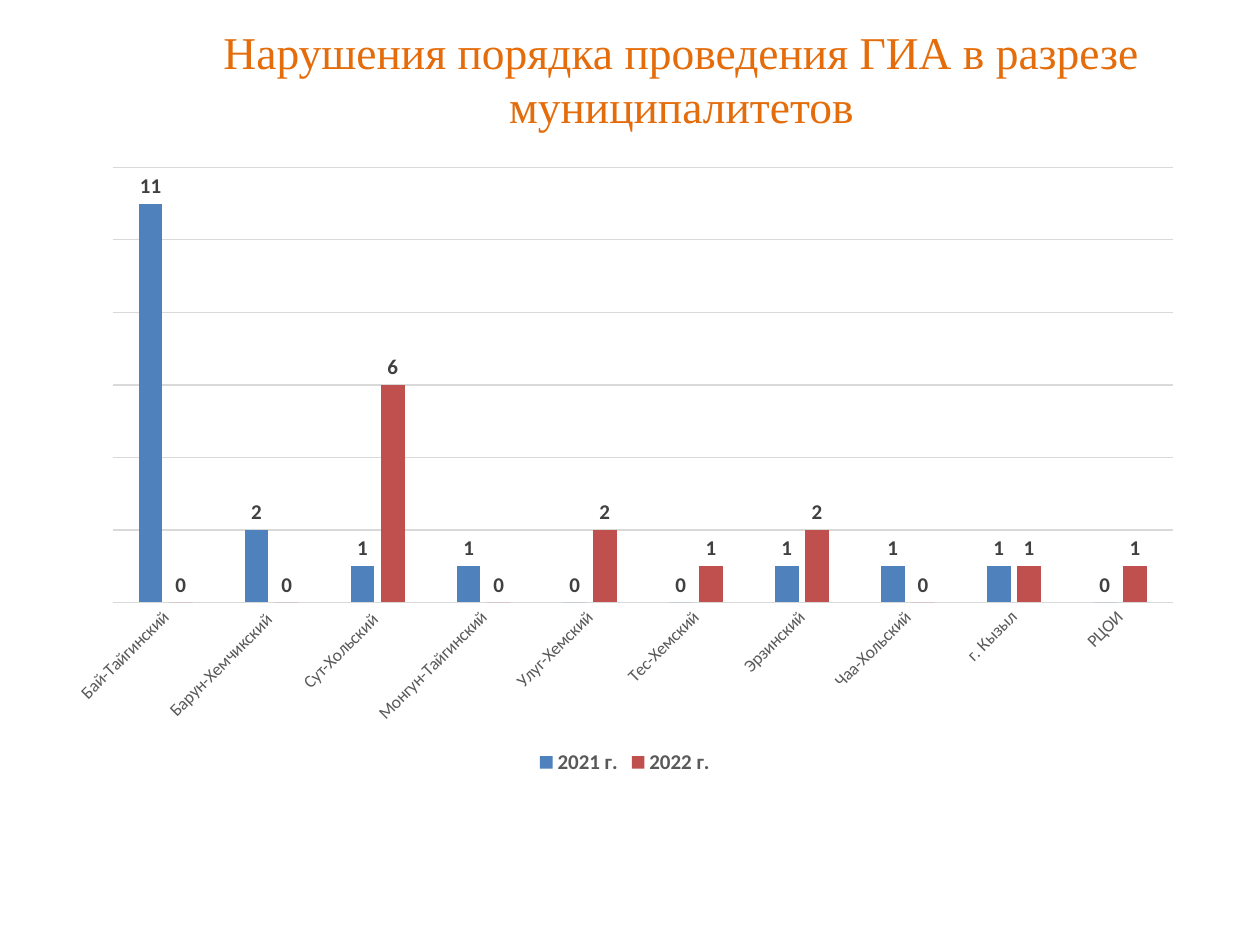
from pptx import Presentation
from pptx.chart.data import CategoryChartData
from pptx.dml.color import RGBColor
from pptx.enum.chart import (XL_CHART_TYPE, XL_LABEL_POSITION as LabelPos,
                             XL_LEGEND_POSITION as LegendPos, XL_TICK_MARK as Tick)
from pptx.enum.text import MSO_ANCHOR, PP_ALIGN
from pptx.util import Inches, Pt

TITLE = "Нарушения порядка проведения ГИА в разрезе муниципалитетов"
VIOLATIONS = [  # municipality, 2021, 2022
    ("Бай-Тайгинский", 11, 0),
    ("Барун-Хемчикский ", 2, 0),
    ("Сут-Хольский ", 1, 6),
    ("Монгун-Тайгинский", 1, 0),
    ("Улуг-Хемский", 0, 2),
    ("Тес-Хемский", 0, 1),
    ("Эрзинский", 1, 2),
    ("Чаа-Хольский", 1, 0),
    ("г. Кызыл", 1, 1),
    ("РЦОИ", 0, 1),
]
YEARS = ["2021 г.", "2022 г."]

THEME = {
    "title_font": "Times New Roman", "chart_font": "Calibri",
    "title_size": 26, "axis_size": 10, "label_size": 12,
    "title": "E46C0A", "bars": ["4F81BD", "C0504D"],
    "text": "000000", "axis_text": "595959", "label": "404040", "grid": "D9D9D9",
}


def color(name):
    return RGBColor.from_string(THEME[name])


def style_font(font, face, size, tint, bold=False):
    font.name = THEME[face]
    font.size = Pt(THEME[size])
    font.color.rgb = color(tint)
    font.bold = bold


def style_line(line):
    line.color.rgb = color("grid")
    line.width = Pt(0.75)


def add_title(slide):
    title = slide.shapes.title
    title.left, title.top = Inches(0.8), Inches(0.13)
    title.width, title.height = Inches(9.22), Inches(0.98)
    frame = title.text_frame
    frame.word_wrap = True
    frame.vertical_anchor = MSO_ANCHOR.MIDDLE
    paragraph = frame.paragraphs[0]
    paragraph.alignment = PP_ALIGN.CENTER
    run = paragraph.add_run()
    run.text = TITLE
    style_font(run.font, "title_font", "title_size", "title")


def add_violations_chart(slide):
    municipalities, *counts = zip(*VIOLATIONS)
    data = CategoryChartData(number_format="General")
    data.categories = municipalities
    for year, values in zip(YEARS, counts):
        data.add_series(year, values)
    chart = slide.shapes.add_chart(
        XL_CHART_TYPE.COLUMN_CLUSTERED, Inches(0.43), Inches(1.23),
        Inches(9.06), Inches(4.96), data).chart
    style_font(chart.font, "chart_font", "axis_size", "text")
    chart.has_title = False

    chart.has_legend = True
    chart.legend.position = LegendPos.BOTTOM
    chart.legend.include_in_layout = False
    style_font(chart.legend.font, "chart_font", "label_size", "axis_text", True)

    districts = chart.category_axis
    districts.major_tick_mark = districts.minor_tick_mark = Tick.NONE
    style_font(districts.tick_labels.font, "chart_font", "axis_size", "axis_text")
    districts.format.line.fill.solid()
    style_line(districts.format.line)
    text_body = districts.tick_labels.font._element.getparent().getparent().getparent()
    text_body.bodyPr.set("rot", str(-45 * 60000))

    scale = chart.value_axis
    scale.visible = False
    scale.minimum_scale, scale.maximum_scale, scale.major_unit = 0, 12, 2
    scale.has_major_gridlines = True
    style_line(scale.major_gridlines.format.line)

    plot = chart.plots[0]
    plot.gap_width, plot.overlap = 219, -27
    plot.vary_by_categories = False
    for year_bars, fill in zip(plot.series, THEME["bars"]):
        year_bars.format.fill.solid()
        year_bars.format.fill.fore_color.rgb = RGBColor.from_string(fill)
        year_bars.invert_if_negative = False
        labels = year_bars.data_labels
        labels.show_value = True
        labels.position = LabelPos.OUTSIDE_END
        style_font(labels.font, "chart_font", "label_size", "label", True)


def main():
    deck = Presentation()
    deck.slide_width, deck.slide_height = Inches(10), Inches(7.5)
    slide = deck.slides.add_slide(deck.slide_layouts[5])
    add_title(slide)
    add_violations_chart(slide)
    deck.save("out.pptx")


if __name__ == "__main__":
    main()
